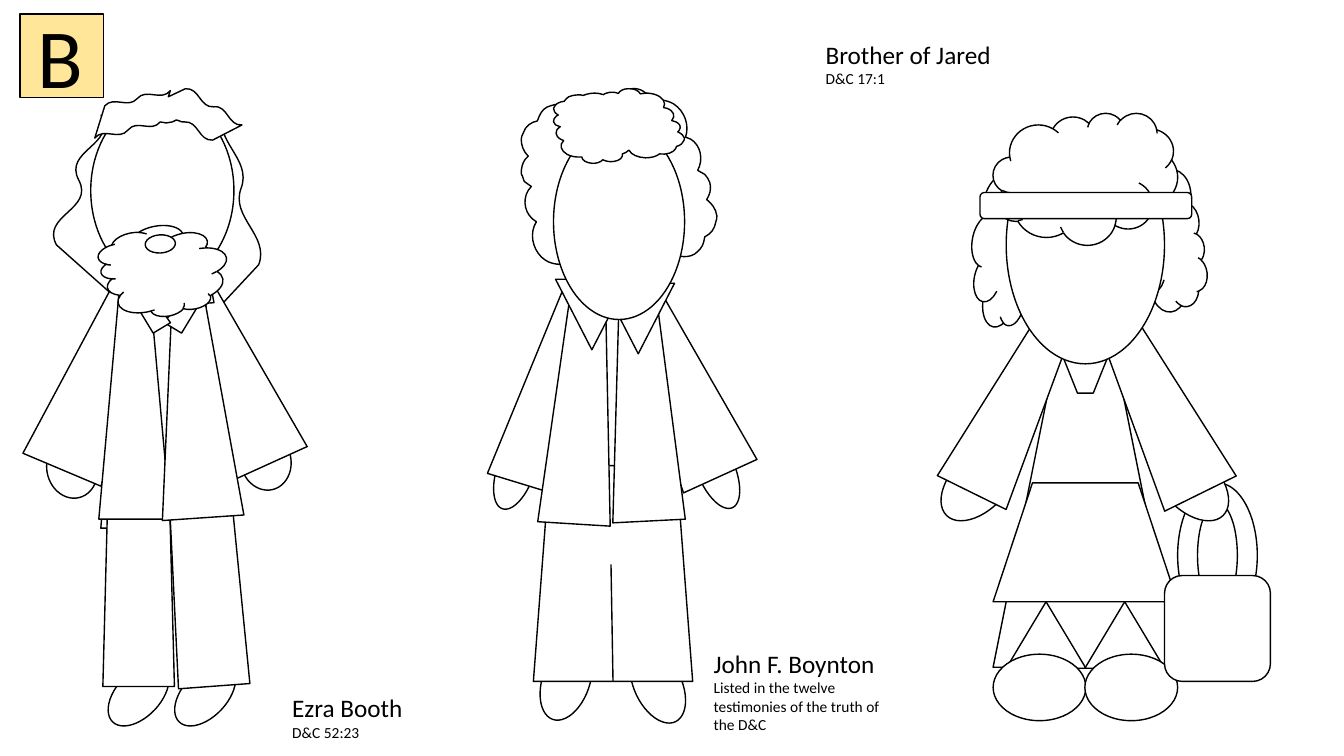
import pptx
import pptx.util
import pptx.dml.color
import pptx.enum.shapes
import pptx.enum.text
import pptx.oxml.ns
import lxml.etree

Inches = pptx.util.Inches
qn = pptx.oxml.ns.qn
MSO = pptx.enum.shapes.MSO_SHAPE
OVAL, TRAP, CLOUD, TRI = MSO.OVAL, MSO.TRAPEZOID, MSO.CLOUD, MSO.ISOSCELES_TRIANGLE
WAVE, RECT, ROUND = MSO.DOUBLE_WAVE, MSO.RECTANGLE, MSO.ROUNDED_RECTANGLE
COLLAR = MSO.FLOWCHART_MANUAL_INPUT


def rgb(color):
    return pptx.dml.color.RGBColor.from_string(color)


def add_text(shapes, box, text, size=18, note=None, note_size=11):
    tf = shapes.add_textbox(*map(Inches, box)).text_frame
    tf.word_wrap = True
    tf.auto_size = pptx.enum.text.MSO_AUTO_SIZE.SHAPE_TO_FIT_TEXT
    lines = [(text, size)] + ([(note, note_size)] if note else [])
    for i, (words, points) in enumerate(lines):
        p = tf.add_paragraph() if i else tf.paragraphs[0]
        r = p.add_run()
        r.text = words
        r.font.name = "Calibri"
        r.font.size = pptx.util.Pt(points)
        r.font.color.rgb = rgb("000000")


fringe = [
    (1.84, 0.88), (1.98, 0.87, 1.98, 1.07, 2.12, 1.06), (2.26, 1.04, 2.26, 1.25, 2.4, 1.24),
    (2.11, 1.39), (1.97, 1.4, 1.97, 1.2, 1.83, 1.21), (1.81, 1.21, 1.79, 1.21, 1.78, 1.2),
    (1.75, 1.19), (1.71, 1.21), (1.69, 1.21, 1.67, 1.22, 1.65, 1.22), (1.59, 1.21),
    (1.5, 1.32, 1.36, 1.18, 1.27, 1.29), (1.18, 1.4, 1.03, 1.26, 0.94, 1.37), (1.04, 1.05),
    (1.13, 0.95, 1.27, 1.08, 1.36, 0.98), (1.45, 0.87, 1.6, 1.01, 1.69, 0.9), (1.67, 0.96),
]
curls = [
    (7.11, 2.14), (7.11, 2.16, 7.11, 2.18, 7.1, 2.2), (7.09, 2.27, 7.05, 2.32, 6.99, 2.35),
    (6.98, 2.4), (6.97, 2.45, 6.93, 2.49, 6.89, 2.52), (6.84, 2.55, 6.79, 2.55, 6.74, 2.54),
    (6.69, 2.61, 6.61, 2.64, 6.53, 2.64), (6.42, 2.63, 6.32, 2.56, 6.29, 2.45), (6.28, 2.45),
    (6.26, 2.49, 6.23, 2.52, 6.19, 2.54), (6.2, 2.63, 6.15, 2.71, 6.07, 2.73),
    (6.01, 2.75, 5.95, 2.73, 5.9, 2.69), (5.87, 2.75, 5.8, 2.79, 5.74, 2.78),
    (5.66, 2.77, 5.59, 2.7, 5.59, 2.62), (5.5, 2.63, 5.42, 2.6, 5.37, 2.55),
    (5.28, 2.46, 5.25, 2.31, 5.32, 2.2), (5.28, 2.17), (5.19, 2.09, 5.18, 1.94, 5.27, 1.85),
    (5.2, 1.8), (5.19, 1.77, 5.18, 1.74, 5.17, 1.72), (5.17, 1.67, 5.18, 1.62, 5.21, 1.58),
    (5.24, 1.55), (5.19, 1.5, 5.17, 1.44, 5.17, 1.38), (5.17, 1.36, 5.18, 1.34, 5.19, 1.32),
    (5.21, 1.25, 5.27, 1.21, 5.33, 1.2), (5.35, 1.15), (5.37, 1.1, 5.41, 1.06, 5.46, 1.05),
    (5.51, 1.03, 5.57, 1.03, 5.61, 1.05), (5.68, 1, 5.76, 0.98, 5.84, 1), (5.91, 1.03),
    (5.92, 1.01, 5.94, 1, 5.96, 0.99), (6.01, 0.96, 6.08, 0.96, 6.13, 1),
    (6.15, 0.93, 6.21, 0.88, 6.27, 0.88), (6.35, 0.87, 6.43, 0.92, 6.45, 1), (6.46, 1.01),
    (6.53, 0.98, 6.61, 0.99, 6.68, 1.03), (6.79, 1.1, 6.84, 1.24, 6.8, 1.36), (6.85, 1.38),
    (6.95, 1.44, 6.98, 1.58, 6.92, 1.69), (6.99, 1.73), (7.01, 1.75, 7.03, 1.78, 7.04, 1.81),
    (7.05, 1.85, 7.05, 1.9, 7.03, 1.94), (7.01, 1.98), (7.06, 2.02, 7.1, 2.07, 7.11, 2.14),
]

ezra = [
    (OVAL, 1, 6.67, 0.75, 0.44, 313.1),
    (OVAL, 1.66, 6.67, 0.75, 0.44, 313.1),
    (WAVE, 0.26, 1.6, 1.7, 0.96, 109, [0.076, -0.1]),
    (WAVE, 1.18, 1.78, 1.95, 0.68, 257.1, [0.076, -0.1], "H"),
    (OVAL, 2.34, 4.32, 0.59, 0.5, 76.2),
    (OVAL, 0.42, 4.4, 0.59, 0.5, 76.2),
    (TRAP, 0.64, 2.46, 0.84, 2.29, 22.9),
    (TRAP, 1.8, 2.55, 0.84, 2.15, 335.6),
    (TRAP, 1, 2.56, 1.23, 2.68, 0, [0.185]),
    (TRAP, 1.02, 4.99, 0.71, 1.82, 0, [0.067]),
    (TRAP, 1.7, 4.91, 0.71, 1.9, 355.8, [0.067]),
    (TRAP, 1.49, 2.48, 0.37, 0.84, 259.1, [0.245]),
    (TRAP, 0.98, 2.63, 0.71, 2.52, 0, [0.317]),
    (TRAP, 1.52, 2.49, 0.81, 2.65, 356.1, [0.368]),
    (OVAL, 0.9, 0.97, 1.42, 1.84),
    (fringe, 0.94, 0.88, 1.46, 0.51),
    (COLLAR, 1.59, 2.93, 0.52, 0.2, 121.2, [], "V"),
    (COLLAR, 1.21, 2.93, 0.52, 0.2, 238.8, [], "HV"),
    (CLOUD, 1.18, 2.06, 0.9, 1.25, 259.1),
    (OVAL, 1.5, 2.27, 0.18, 0.3, 86.6),
]
john = [
    (OVAL, 5.38, 6.35, 0.47, 0.81, 19.1),
    (OVAL, 6.29, 6.39, 0.47, 0.81, 334.4),
    (OVAL, 4.93, 4.26, 0.37, 0.81, 19.1),
    (OVAL, 6.92, 4.26, 0.37, 0.81, 337.1),
    (RECT, 5.76, 2.97, 0.59, 1.99, 0, [], "", "325491"),
    (TRAP, 5.29, 4.62, 1.58, 2.14, 0, [0.103]),
    (TRAP, 6.3, 2.68, 0.8, 2.14, 335.5),
    (TRAP, 6.02, 2.89, 0.72, 2.28, 357.1),
    (TRAP, 5.13, 2.72, 0.8, 2.14, 17),
    (TRAP, 5.4, 2.99, 0.72, 2.21, 3.5),
    (TRI, 5.51, 2.77, 0.72, 0.7, 180),
    (TRI, 5.97, 2.81, 0.72, 0.7, 180),
    (curls, 5.17, 0.88, 1.94, 1.9, 270),
    (OVAL, 5.49, 1.23, 1.3, 1.94),
    (curls, 5.49, 0.88, 1.3, 0.74, 270),
]
jared = [
    (MSO.DONUT, 11.68, 4.79, 0.79, 1.44),
    (OVAL, 11.35, 4.51, 0.92, 0.55, 45.8, [], "H"),
    (OVAL, 9.25, 4.51, 0.92, 0.55, 314.2),
    (CLOUD, 10.75, 1.92, 1.54, 0.82, 83.6),
    (CLOUD, 9.15, 2.06, 1.69, 0.7, 100.3),
    (TRAP, 9.85, 2.95, 1.83, 3.67, 0, [0.401]),
    (TRAP, 10.37, 3.11, 0.79, 0.79, 180, [0.401]),
    (TRAP, 9.66, 3.16, 0.76, 1.82, 26.2),
    (TRAP, 11.11, 3.17, 0.79, 1.82, 333.8, [], "H"),
    (OVAL, 9.98, 1.25, 1.57, 2.36),
    (CLOUD, 9.85, 1.12, 1.83, 1.31),
    (ROUND, 9.72, 1.91, 2.1, 0.26),
    (TRAP, 9.85, 4.79, 1.83, 1.18, 0, [0.331]),
    (TRI, 9.98, 5.97, 0.79, 0.66),
    (TRI, 10.76, 5.97, 0.79, 0.66),
    (OVAL, 9.85, 6.49, 0.92, 0.66),
    (OVAL, 10.76, 6.49, 0.92, 0.66),
    (ROUND, 11.55, 5.71, 1.05, 1.05),
]
badge = [(RECT, 0.2, 0.14, 0.83, 0.83, 0, [], "", "000000", "FFE699")]
ezra_caption = ((2.8, 6.82, 1.96, 0.59), "Ezra Booth", 18, "D&C 52:23")
john_caption = ((6.98, 6.38, 1.96, 0.96), "John F. Boynton", 18,
                "Listed in the twelve testimonies of the truth of the D&C")
jared_caption = ((8.09, 0.34, 2.08, 0.59), "Brother of Jared", 18, "D&C 17:1")

prs = pptx.Presentation()
prs.slide_width, prs.slide_height = Inches(13.33), Inches(7.5)
s = prs.slides.add_slide(prs.slide_layouts[6])

for item in [ezra, ezra_caption, john_caption, john, jared, jared_caption, badge]:
    if isinstance(item, tuple):
        add_text(s.shapes, *item)
        continue
    shapes = s.shapes.add_group_shape().shapes
    for kind, x, y, w, h, *rest in item:
        rot, adj, flip, line, fill = rest + [0, [], "", "000000", "FFFFFF"][len(rest):]
        if isinstance(kind, list):
            xs, ys = zip(*[seg[-2:] for seg in kind])
            kx, ky = w / (max(xs) - min(xs)), h / (max(ys) - min(ys))
            cx, cy = x + w / 2, y + h / 2
            segs = []
            for seg in kind:
                pts = [(x + (px - min(xs)) * kx, y + (py - min(ys)) * ky)
                       for px, py in zip(seg[::2], seg[1::2])]
                if rot == 270:
                    pts = [(cx + cy - py, cy - cx + px) for px, py in pts]
                segs.append([(Inches(px), Inches(py)) for px, py in pts])
            fb = shapes.build_freeform(*segs[0][0])
            fb.add_line_segments([seg[-1] for seg in segs[1:]], close=True)
            sp = fb.convert_to_shape()
            for node, seg in zip(list(sp._element.iter(qn("a:lnTo"))), segs[1:]):
                if len(seg) == 3:
                    node.tag = qn("a:cubicBezTo")
                    for i, (px, py) in enumerate(seg[:2]):
                        node.insert(i, lxml.etree.Element(
                            qn("a:pt"), x=str(px - sp.left), y=str(py - sp.top)))
        else:
            sp = shapes.add_shape(kind, Inches(x), Inches(y), Inches(w), Inches(h))
            for i, value in enumerate(adj):
                sp.adjustments[i] = value
        sp.rotation = rot
        for axis in flip:
            sp._element.spPr.xfrm.set("flip" + axis, "1")
        sp.shadow.inherit = False
        sp.fill.solid()
        sp.fill.fore_color.rgb = rgb(fill)
        sp.line.color.rgb = rgb(line)
        sp.line.width = pptx.util.Pt(1)
    if item is john:
        seam = shapes.add_connector(pptx.enum.shapes.MSO_CONNECTOR.STRAIGHT,
                                    Inches(6.06), Inches(5.6), Inches(6.08), Inches(6.76))
        seam.line.color.rgb = rgb("000000")
        seam.line.width = pptx.util.Pt(1)
        lxml.etree.SubElement(seam._element.spPr, qn("a:effectLst"))
    if item is badge:
        add_text(shapes, (0.27, 0, 0.38, 1.11), "B", size=60)

prs.save("out.pptx")
